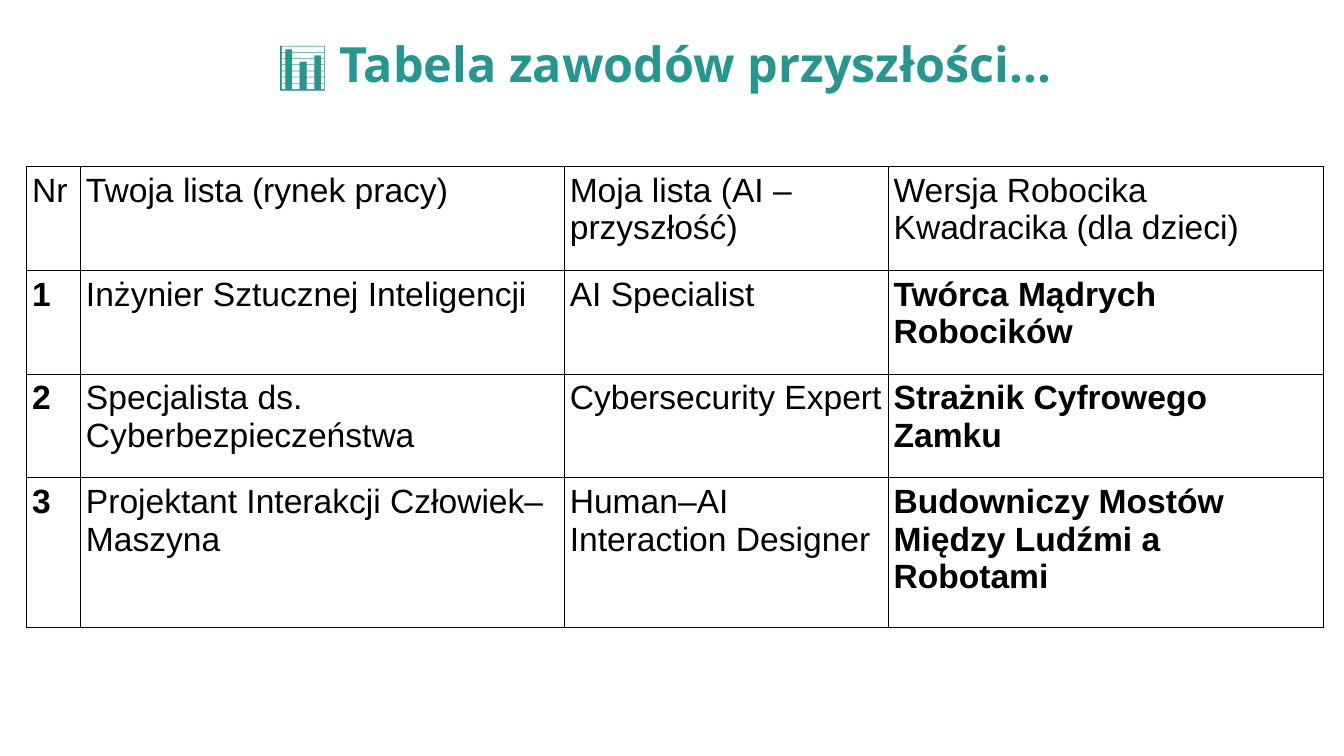
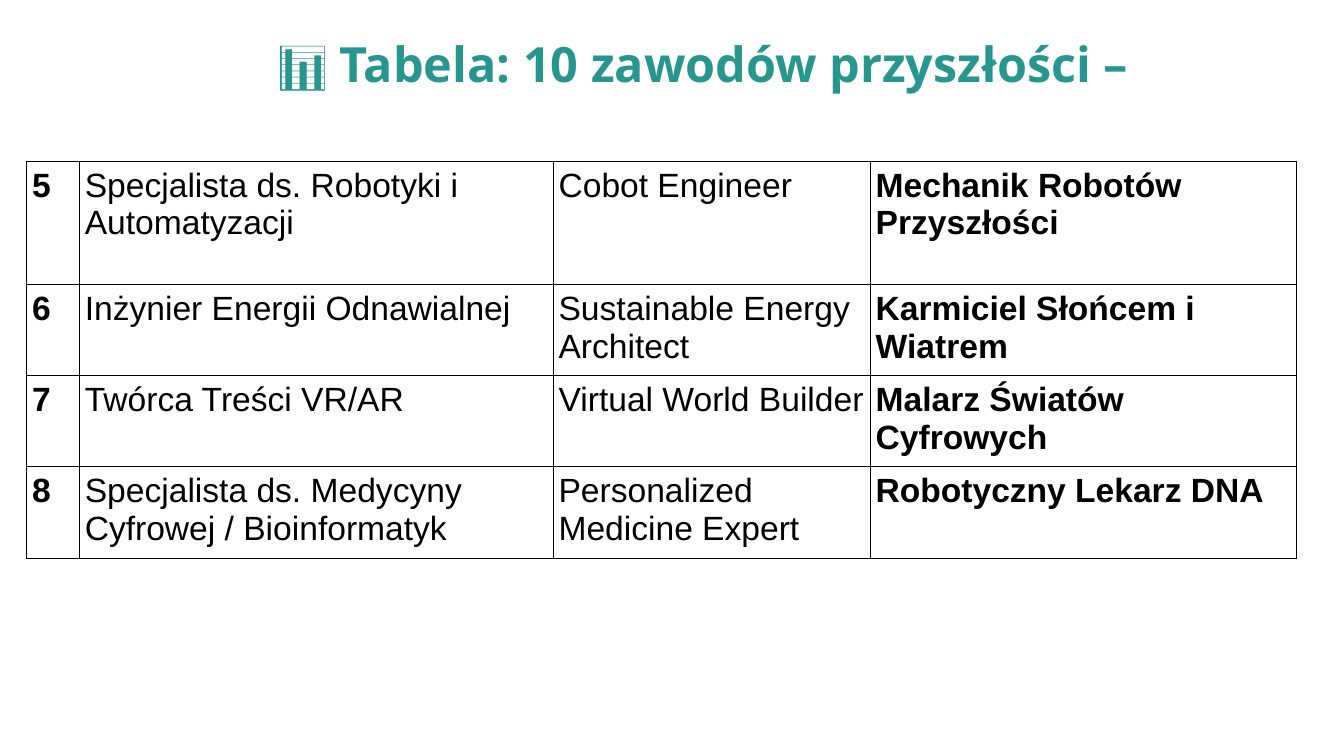
"""Build two slides with tables of the jobs of the future."""
import pptx
import pptx.dml.color
import pptx.enum.text
import pptx.oxml
import pptx.oxml.ns
import pptx.util

Pt = pptx.util.Pt
TEAL = pptx.dml.color.RGBColor(0x26, 0x96, 0x8F)
BLACK = pptx.dml.color.RGBColor(0, 0, 0)

TITLE_BOX = (141.84, 14.4, 537.12, 117.36)
TABLE_LEFT = 14.4
COLUMN_WIDTHS = (28.8, 259.2, 173.5, 233.3)
CELL_MARGIN = 2.88
BORDER_WIDTH = 0.57

JOB_SLIDES = [
    {
        "title": "📊 Tabela zawodów przyszłości...",
        "top": 89.2,
        "width": 694.8,
        "row_heights": (55.6, 55.6, 55.6, 80),
        "has_header": True,
        "jobs": [
            ("Nr", "Twoja lista (rynek pracy)", "Moja lista (AI – przyszłość)",
             "Wersja Robocika Kwadracika (dla dzieci)"),
            ("1", "Inżynier Sztucznej Inteligencji", "AI Specialist",
             "Twórca Mądrych Robocików"),
            ("2", "Specjalista ds. Cyberbezpieczeństwa", "Cybersecurity Expert",
             "Strażnik Cyfrowego Zamku"),
            ("3", "Projektant Interakcji Człowiek–Maszyna", "Human–AI Interaction Designer",
             "Budowniczy Mostów Między Ludźmi a Robotami"),
        ],
    },
    {
        "title": "📊 Tabela: 10 zawodów przyszłości –",
        "top": 86.4,
        "width": 680.4,
        "row_heights": (66.2, 48.8, 48.8, 48.8),
        "has_header": False,
        "jobs": [
            ("5", "Specjalista ds. Robotyki i Automatyzacji", "Cobot Engineer",
             "Mechanik Robotów Przyszłości"),
            ("6", "Inżynier Energii Odnawialnej", "Sustainable Energy Architect",
             "Karmiciel Słońcem i Wiatrem"),
            ("7", "Twórca Treści VR/AR", "Virtual World Builder",
             "Malarz Światów Cyfrowych"),
            ("8", "Specjalista ds. Medycyny Cyfrowej / Bioinformatyk",
             "Personalized Medicine Expert", "Robotyczny Lekarz DNA"),
        ],
    },
]


def write_text(frame, text, *, size, font, color, bold=False):
    frame.word_wrap = True
    paragraph = frame.paragraphs[0]
    paragraph.alignment = pptx.enum.text.PP_ALIGN.LEFT
    run = paragraph.add_run()
    run.text = text
    run.font.size = Pt(size)
    run.font.name = font
    run.font.bold = bold
    run.font.color.rgb = color


def add_title(slide, text):
    title = slide.shapes.title
    title.left, title.top, title.width, title.height = map(Pt, TITLE_BOX)
    frame = title.text_frame
    frame.auto_size = pptx.enum.text.MSO_AUTO_SIZE.NONE
    frame.vertical_anchor = pptx.enum.text.MSO_ANCHOR.TOP
    write_text(frame, text, size=26, font="Open Sans", color=TEAL, bold=True)


def add_borders(cell):
    properties = cell._tc.get_or_add_tcPr()
    for side in ("lnL", "lnR", "lnT", "lnB"):
        properties.append(pptx.oxml.parse_xml(
            f'<a:{side} {pptx.oxml.ns.nsdecls("a")} w="{Pt(BORDER_WIDTH)}">'
            f'<a:solidFill><a:srgbClr val="{BLACK}"/></a:solidFill></a:{side}>'))


def add_job_table(slide, content):
    jobs, heights = content["jobs"], content["row_heights"]
    table = slide.shapes.add_table(
        len(jobs), len(COLUMN_WIDTHS), Pt(TABLE_LEFT), Pt(content["top"]),
        Pt(content["width"]), Pt(sum(heights))).table
    table.first_row = content["has_header"]
    table.horz_banding = False
    scale = content["width"] / sum(COLUMN_WIDTHS)
    for column, width in zip(table.columns, COLUMN_WIDTHS):
        column.width = Pt(width * scale)
    for row_index, (row, height, job) in enumerate(zip(table.rows, heights, jobs)):
        row.height = Pt(height)
        is_header = content["has_header"] and row_index == 0
        for column_index, (cell, text) in enumerate(zip(row.cells, job)):
            cell.margin_left = cell.margin_right = Pt(CELL_MARGIN)
            cell.margin_top = cell.margin_bottom = Pt(CELL_MARGIN)
            add_borders(cell)
            cell.fill.background()
            is_outer = column_index in (0, len(job) - 1)
            write_text(cell.text_frame, text, size=18, font="Arial", color=BLACK,
                       bold=is_outer and not is_header)


def main():
    deck = pptx.Presentation()
    deck.slide_width, deck.slide_height = Pt(720), Pt(405)
    for content in JOB_SLIDES:
        slide = deck.slides.add_slide(deck.slide_layouts[5])
        add_title(slide, content["title"])
        add_job_table(slide, content)
    deck.save("out.pptx")


if __name__ == "__main__":
    main()
